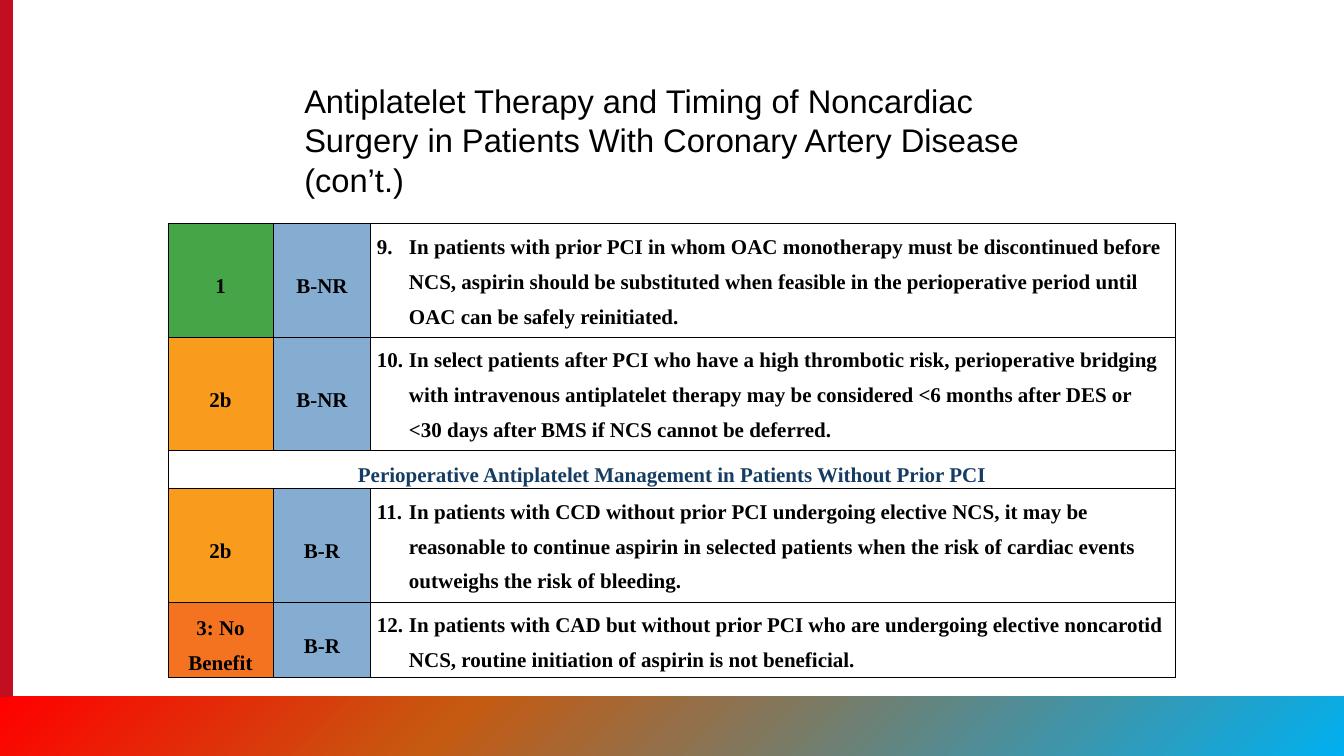
from lxml import etree
from pptx import Presentation
from pptx.dml.color import RGBColor
from pptx.enum.shapes import MSO_SHAPE
from pptx.enum.text import MSO_ANCHOR, MSO_AUTO_SIZE, PP_ALIGN
from pptx.oxml import parse_xml
from pptx.oxml.ns import qn
from pptx.util import Pt

RECT = MSO_SHAPE.RECTANGLE
MIDDLE = MSO_ANCHOR.MIDDLE
CENTER = PP_ALIGN.CENTER
GROW = MSO_AUTO_SIZE.SHAPE_TO_FIT_TEXT
NS = "http://schemas.openxmlformats.org/drawingml/2006/main"

# Content
COLORS = {
    "black": "000000", "bar": "C10E21", "level": "85ADD1", "head": "153D63",
    "1": "45A547", "2b": "F99B1C", "3: No\nBenefit": "F37321",
}
BAND = [(0, "FF0000"), (34, "C55A11"), (100, "00B0F0")]
TITLE = ("Antiplatelet Therapy and Timing of Noncardiac Surgery in Patients "
         "With Coronary Artery Disease (con’t.)")
FIRST = 9  # number of the first recommendation
ROWS = [
    ("1", "B-NR",
     "In patients with prior PCI in whom OAC monotherapy must be discontinued "
     "before NCS, aspirin should be substituted when feasible in the "
     "perioperative period until OAC can be safely reinitiated."),
    ("2b", "B-NR",
     "In select patients after PCI who have a high thrombotic risk, "
     "perioperative bridging with intravenous antiplatelet therapy may be "
     "considered <6 months after DES or <30 days after BMS if NCS cannot be "
     "deferred."),
    ("Perioperative Antiplatelet Management in Patients Without Prior PCI",),
    ("2b", "B-R",
     "In patients with CCD without prior PCI undergoing elective NCS, it may "
     "be reasonable to continue aspirin in selected patients when the risk of "
     "cardiac events outweighs the risk of bleeding."),
    ("3: No\nBenefit", "B-R",
     "In patients with CAD but without prior PCI who are undergoing elective "
     "noncarotid NCS, routine initiation of aspirin is not beneficial."),
]
WIDTHS = [105, 98, 805]
HEIGHTS = [113, 113, 38, 113, 75]


def px(n):
    return n * 914400 // 84


def rgb(name):
    return RGBColor.from_string(COLORS[name])


def style(frame, font, size, color, bold=False):
    for para in frame.paragraphs:
        for run in para.runs:
            run.font.name = font
            run.font.size = Pt(size)
            run.font.bold = bold
            run.font.color.rgb = rgb(color)


def block(x, y, w, h):
    shape = slide.shapes.add_shape(RECT, px(x), px(y), px(w), px(h))
    shape.shadow.inherit = False
    shape.line.fill.background()
    return shape


def border(cell):
    props = cell._tc.get_or_add_tcPr()
    for side in "LRTB":
        props.append(parse_xml(
            f'<a:ln{side} xmlns:a="{NS}" w="12700"><a:solidFill>'
            f'<a:srgbClr val="{COLORS["black"]}"/></a:solidFill></a:ln{side}>'))


def fill_cell(cell, text, color=None, ink="black", num=None):
    cell.margin_left = cell.margin_right = px(6)
    cell.margin_top = cell.margin_bottom = 0
    cell.text_frame.text = text
    for para in cell.text_frame.paragraphs:
        if num:
            props = para._p.get_or_add_pPr()
            props.set("marL", str(px(32)))
            props.set("indent", str(-px(32)))
            etree.SubElement(props, qn("a:buAutoNum"),
                             type="arabicPeriod", startAt=str(num))
        else:
            para.alignment = CENTER
        para.line_spacing = 1.5
    if not num:
        cell.vertical_anchor = MIDDLE
    style(cell.text_frame, "Times New Roman", 18, ink, True)
    if color:
        cell.fill.solid()
        cell.fill.fore_color.rgb = rgb(color)


deck = Presentation()
deck.slide_width, deck.slide_height = px(1344), px(756)
slide = deck.slides.add_slide(deck.slide_layouts[6])

# Side bar and bottom band
bar = block(0, 0, 13, 756)
bar.fill.solid()
bar.fill.fore_color.rgb = rgb("bar")
band = block(0, 697, 1344, 59)
stops = "".join(f'<a:gs pos="{pos * 1000}"><a:srgbClr val="{color}"/></a:gs>'
                for pos, color in BAND)
band._element.spPr.find(qn("a:prstGeom")).addnext(parse_xml(
    f'<a:gradFill xmlns:a="{NS}" rotWithShape="1"><a:gsLst>{stops}</a:gsLst>'
    '<a:lin ang="2700000" scaled="0"/></a:gradFill>'))

# Title
title = slide.shapes.add_textbox(px(296), px(77), px(753), px(127))
title.text_frame.word_wrap = True
title.text_frame.auto_size = GROW
title.text_frame.text = TITLE
style(title.text_frame, "Arial", 28, "black")

# Table of recommendations
table = slide.shapes.add_table(len(ROWS), len(WIDTHS), px(168), px(224),
                               px(sum(WIDTHS)), px(sum(HEIGHTS))).table
table.first_row = table.horz_banding = False
for col, width in zip(table.columns, WIDTHS):
    col.width = px(width)
for row, height in zip(table.rows, HEIGHTS):
    row.height = px(height)
for cell in table.iter_cells():
    border(cell)
    cell.fill.background()

num = FIRST
for r, row in enumerate(ROWS):
    if len(row) == 1:
        table.cell(r, 0).merge(table.cell(r, len(WIDTHS) - 1))
        fill_cell(table.cell(r, 0), row[0], ink="head")
        continue
    grade, level, advice = row
    fill_cell(table.cell(r, 0), grade, grade)
    fill_cell(table.cell(r, 1), level, "level")
    fill_cell(table.cell(r, 2), advice, num=num)
    num += 1

deck.save("out.pptx")
